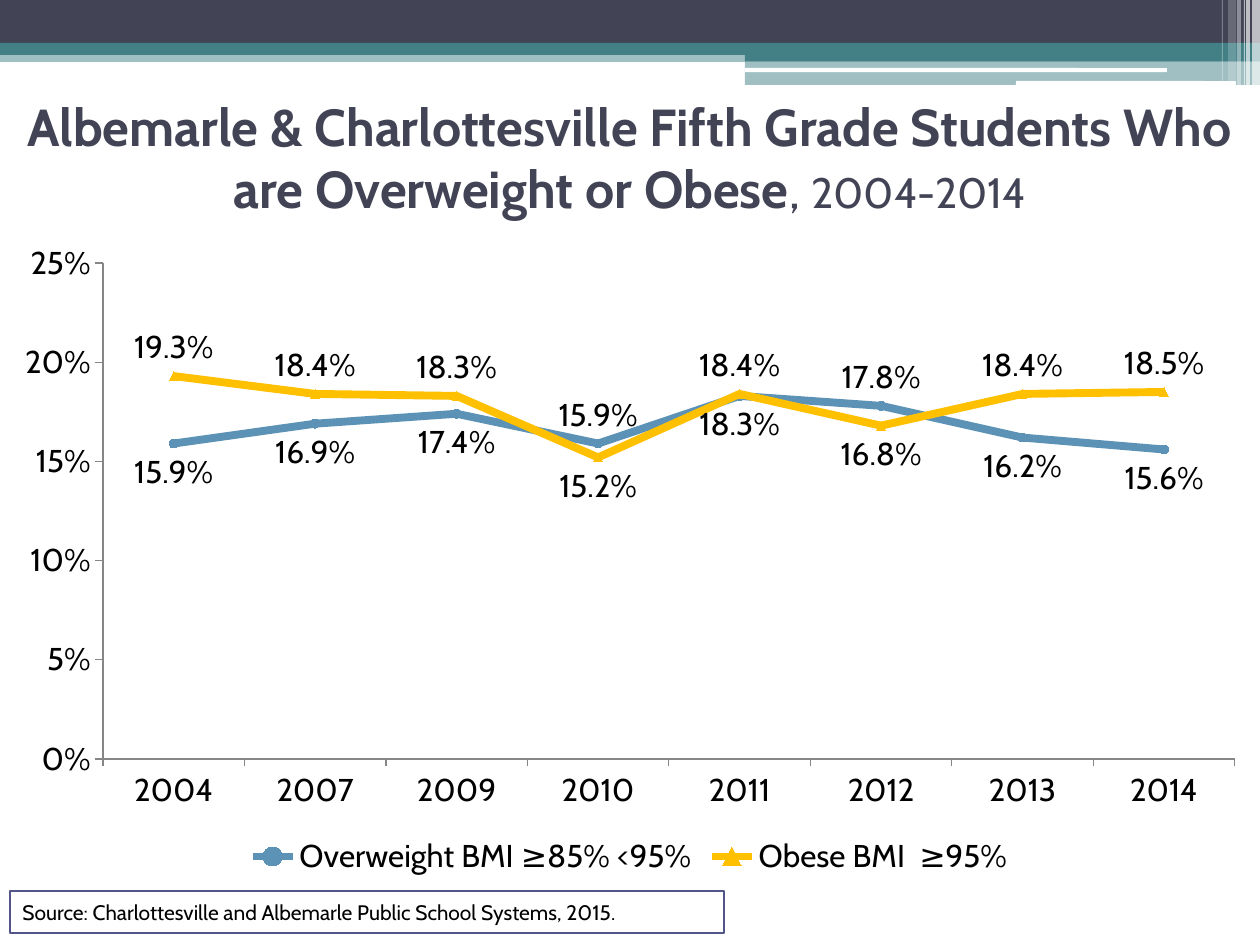
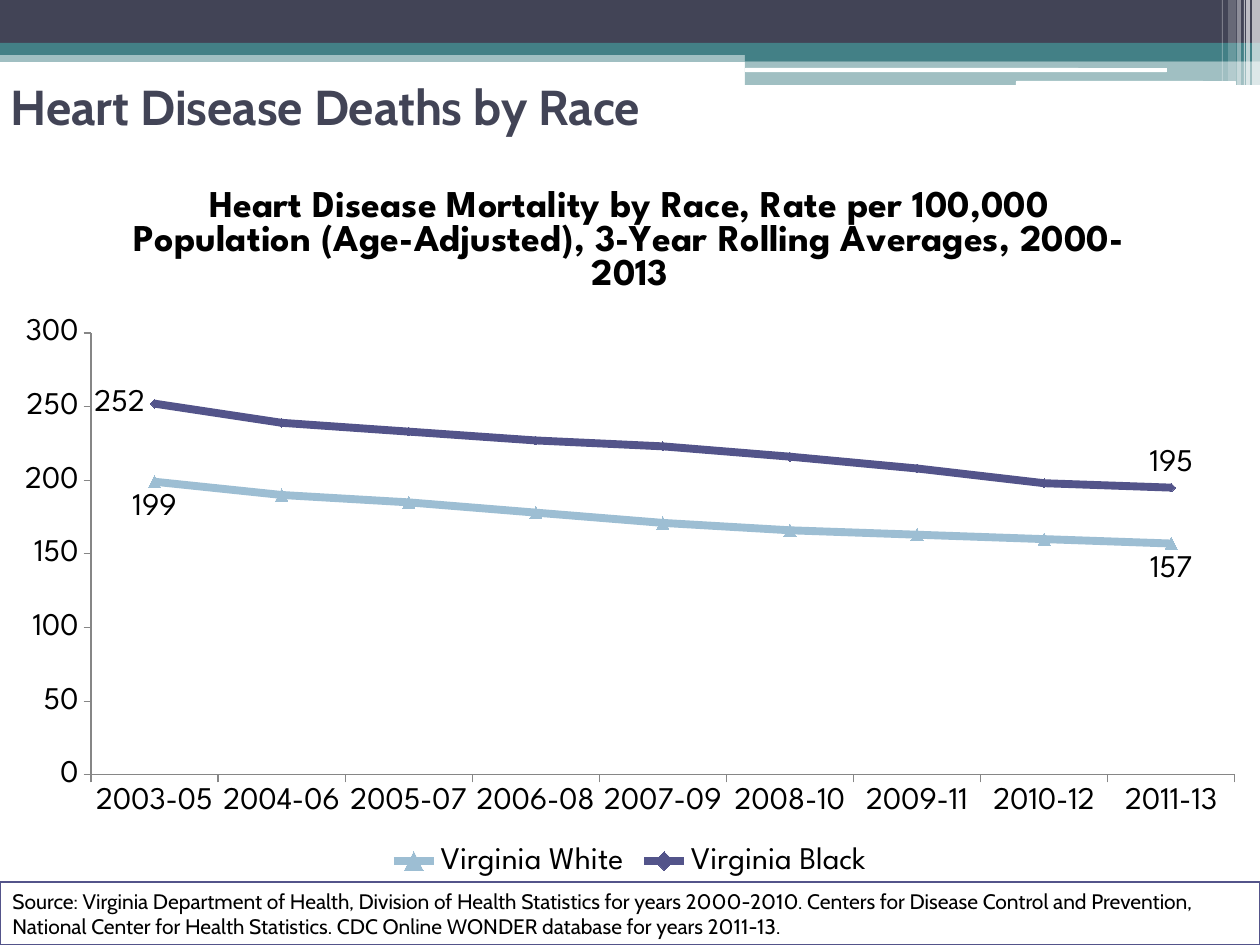
from lxml.etree import SubElement
from pptx import Presentation
from pptx.chart.data import CategoryChartData
from pptx.dml.color import RGBColor
from pptx.enum.chart import (XL_CHART_TYPE, XL_LABEL_POSITION, XL_LEGEND_POSITION,
                             XL_MARKER_STYLE, XL_TICK_MARK)
from pptx.enum.shapes import MSO_SHAPE
from pptx.enum.text import MSO_ANCHOR, MSO_AUTO_SIZE, PP_ALIGN
from pptx.oxml.ns import qn
from pptx.util import Pt

PX = 914400 / 126
WIDTH, HEIGHT = 1260, 945
NAVY, TEAL, WHITE, BLACK = "424456", "438086", "FFFFFF", "000000"
PURPLE, BLUE, GOLD, PALE, GREY = "53548A", "5C92B5", "FFC000", "9DBED3", "868686"
BODY, DISPLAY = "Cabin", "League Spartan"
ABOVE, BELOW, LEFT = XL_LABEL_POSITION.ABOVE, XL_LABEL_POSITION.BELOW, XL_LABEL_POSITION.LEFT


def emu(*lengths):
    """Turn px lengths into EMU."""
    return [round(n * PX) for n in lengths]


def rgb(color):
    """Return the colour for a hex string."""
    return RGBColor.from_string(color)


def set_font(font, name, size, color, bold=False):
    """Set the face, size, colour and weight of a font."""
    font.name, font.size, font.bold = name, Pt(size), bold
    font.color.rgb = rgb(color)


def add_box(slide, box, color, alpha=100, kind=MSO_SHAPE.RECTANGLE):
    """Add a borderless filled shape, transparent when alpha is below 100."""
    sp = slide.shapes.add_shape(kind, *emu(*box))
    sp.shadow.inherit = False
    sp.fill.solid()
    sp.fill.fore_color.rgb = rgb(color)
    sp.line.fill.background()
    if alpha < 100:
        clr = sp._element.spPr.find(".//" + qn("a:srgbClr"))
        SubElement(clr, qn("a:alpha")).set("val", str(alpha * 1000))
    return sp


def add_header_bands(slide, layout):
    """Draw the header bands and place them behind everything on the layout."""
    bands = [
        ((0, 50, WIDTH, 12), TEAL, 50), ((0, 0, WIDTH, 43), NAVY, 100),
        ((0, 43, WIDTH, 12), TEAL, 100), ((745, 49, 515, 12), TEAL, 100),
        ((745, 61, 515, 24), TEAL, 50),
    ]
    rules = [(745, 68, 422, 4), (1016, 81, 220, 5)]
    stripes = [(1252, 8, 85, 65), (1246, 4, 85, 65), (1244, 1, 85, 60),
               (1237, 4, 85, 40), (1228, 8, 81, 20), (1222, 1, 81, 30)]
    shapes = [add_box(slide, *band) for band in bands]
    shapes += [add_box(slide, rule, WHITE, kind=MSO_SHAPE.ROUNDED_RECTANGLE) for rule in rules]
    shapes += [add_box(slide, (x, 0, w, h), WHITE, alpha) for x, w, h, alpha in stripes]
    for i, sp in enumerate(shapes):
        layout.shapes.element.insert(2 + i, sp._element)


def add_title(slide, box, runs, align):
    """Place the title and fill it with (text, size, bold) runs."""
    title = slide.shapes.title
    title.left, title.top, title.width, title.height = emu(*box)
    tf = title.text_frame
    tf.word_wrap, tf.auto_size = True, MSO_AUTO_SIZE.NONE
    tf.vertical_anchor = MSO_ANCHOR.MIDDLE
    p = tf.paragraphs[0]
    p.alignment = align
    for text, size, bold in runs:
        r = p.add_run()
        r.text = text
        set_font(r.font, BODY, size, NAVY, bold)


def add_source(slide, box, text):
    """Add the outlined source note."""
    sp = add_box(slide, box, WHITE)
    sp.line.color.rgb, sp.line.width = rgb(PURPLE), Pt(0.75)
    tf = sp.text_frame
    tf.word_wrap, tf.vertical_anchor = True, MSO_ANCHOR.MIDDLE
    p = tf.paragraphs[0]
    p.text, p.alignment = text, PP_ALIGN.LEFT
    set_font(p.font, BODY, 12, BLACK)


def set_plot_box(chart, box, plot):
    """Fix the inner plot area, given in px relative to the chart box."""
    area = chart._chartSpace.chart.plotArea
    for old in area.findall(qn("c:layout")):
        area.remove(old)
    layout = SubElement(area, qn("c:layout"))
    area.insert(0, layout)
    manual = SubElement(layout, qn("c:manualLayout"))
    settings = [("layoutTarget", "inner"), ("xMode", "edge"), ("yMode", "edge")]
    settings += [(k, f"{n / box[2 + i % 2]:.4f}") for i, (k, n) in enumerate(zip("xywh", plot))]
    for tag, val in settings:
        SubElement(manual, qn("c:" + tag)).set("val", val)


def style_axes(chart, top, step, number_format):
    """Give both axes grey lines and the value axis its scale."""
    for axis in (chart.category_axis, chart.value_axis):
        axis.has_major_gridlines = False
        axis.major_tick_mark, axis.minor_tick_mark = XL_TICK_MARK.OUTSIDE, XL_TICK_MARK.NONE
        axis.format.line.color.rgb, axis.format.line.width = rgb(GREY), Pt(0.75)
    axis = chart.value_axis
    axis.minimum_scale, axis.maximum_scale, axis.major_unit = 0, top, step
    axis.tick_labels.number_format = number_format
    axis.tick_labels.number_format_is_linked = False


def style_series(ser, color, marker, size, position, point_positions):
    """Colour a line and its markers and place its value labels."""
    ser.smooth = False
    ser.format.line.color.rgb, ser.format.line.width = rgb(color), Pt(4.5)
    ser.marker.style, ser.marker.size = marker, size
    ser.marker.format.fill.solid()
    ser.marker.format.fill.fore_color.rgb = rgb(color)
    ser.marker.format.line.color.rgb = rgb(color)
    ser.data_labels.show_value = position is not None
    if position is not None:
        ser.data_labels.position = position
    for i, pos in point_positions.items():
        ser.points[i].data_label.position = pos


def add_line_chart(slide, box, plot, font, cats, series, scale, label_format, title=None):
    """Add a line chart from (name, values, style) series."""
    data = CategoryChartData(number_format=label_format)
    data.categories = cats
    for name, values, _ in series:
        data.add_series(name, values)
    chart = slide.shapes.add_chart(XL_CHART_TYPE.LINE_MARKERS, *emu(*box), data).chart
    set_font(chart.font, font, 18, BLACK)
    chart.has_title = title is not None
    if title:
        p = chart.chart_title.text_frame.paragraphs[0]
        p.text = title
        set_font(p.font, font, 21.6, BLACK, True)
        chart.chart_title.include_in_layout = False
    chart.has_legend = True
    chart.legend.position = XL_LEGEND_POSITION.BOTTOM
    chart.legend.include_in_layout = False
    chart.plots[0].vary_by_categories = False
    style_axes(chart, *scale)
    for ser, (_, _, style) in zip(chart.plots[0].series, series):
        style_series(ser, *style)
    set_plot_box(chart, box, plot)


def build_student_weight(slide):
    """Fill the slide on overweight and obese students."""
    add_title(slide, (0, 73, WIDTH, 168), [
        ("Albemarle & Charlottesville Fifth Grade Students Who are Overweight or Obese", 29.7, True),
        (", ", 28.8, False), ("2004-2014", 24.3, False)], PP_ALIGN.CENTER)
    add_source(slide, (10, 891, 714, 42),
               "Source: Charlottesville and Albemarle Public School Systems, 2015.")
    overweight = (0.159, 0.169, 0.174, 0.159, 0.183, 0.178, 0.162, 0.156)
    obese = (0.193, 0.184, 0.183, 0.152, 0.184, 0.168, 0.184, 0.185)
    add_line_chart(
        slide, (0, 231, WIDTH, 651), (103, 32, 1132, 496), BODY,
        ["2004", "2007", "2009", "2010", "2011", "2012", "2013", "2014"],
        [("Overweight BMI ≥85% <95%", overweight,
          (BLUE, XL_MARKER_STYLE.CIRCLE, 5, BELOW, {3: ABOVE, 5: ABOVE})),
         ("Obese BMI  ≥95%", obese,
          (GOLD, XL_MARKER_STYLE.TRIANGLE, 5, ABOVE, {3: BELOW, 5: BELOW}))],
        (0.25, 0.05, "0%"), "0.0%")


def build_heart_disease(slide):
    """Fill the slide on heart disease deaths."""
    add_title(slide, (-2, 53, 1050, 105),
              [("Heart Disease Deaths by Race", 28, True)], PP_ALIGN.LEFT)
    add_source(slide, (0, 882, WIDTH, 63),
               "Source: Virginia Department of Health, Division of Health Statistics for years "
               "2000-2010. Centers for Disease Control and Prevention, National Center for Health "
               "Statistics. CDC Online WONDER database for years 2011-13.")
    white = (199, 190, 185, 178, 171, 166, 163, 160, 157)
    black = (252, 239, 233, 227, 223, 216, 208, 198, 195)
    add_line_chart(
        slide, (0, 159, WIDTH, 723), (91, 174, 1144, 442), DISPLAY,
        [f"{year}-{year % 100 + 2:02}" for year in range(2003, 2012)],
        [("Virginia White", white,
          (PALE, XL_MARKER_STYLE.TRIANGLE, 7, None, {0: BELOW, 8: BELOW})),
         ("Virginia Black", black,
          (PURPLE, XL_MARKER_STYLE.DIAMOND, 5, None, {0: LEFT, 8: ABOVE}))],
        (300, 50, "0"), "0",
        "Heart Disease Mortality by Race, Rate per 100,000 Population (Age-Adjusted), "
        "3-Year Rolling Averages, 2000-2013")


def main():
    """Build and save the presentation."""
    prs = Presentation()
    prs.slide_width, prs.slide_height = emu(WIDTH, HEIGHT)
    layout = prs.slide_layouts[5]
    builders = (build_student_weight, build_heart_disease)
    slides = [prs.slides.add_slide(layout) for _ in builders]
    add_header_bands(slides[0], layout)
    for build, slide in zip(builders, slides):
        build(slide)
    prs.save("out.pptx")


if __name__ == "__main__":
    main()
